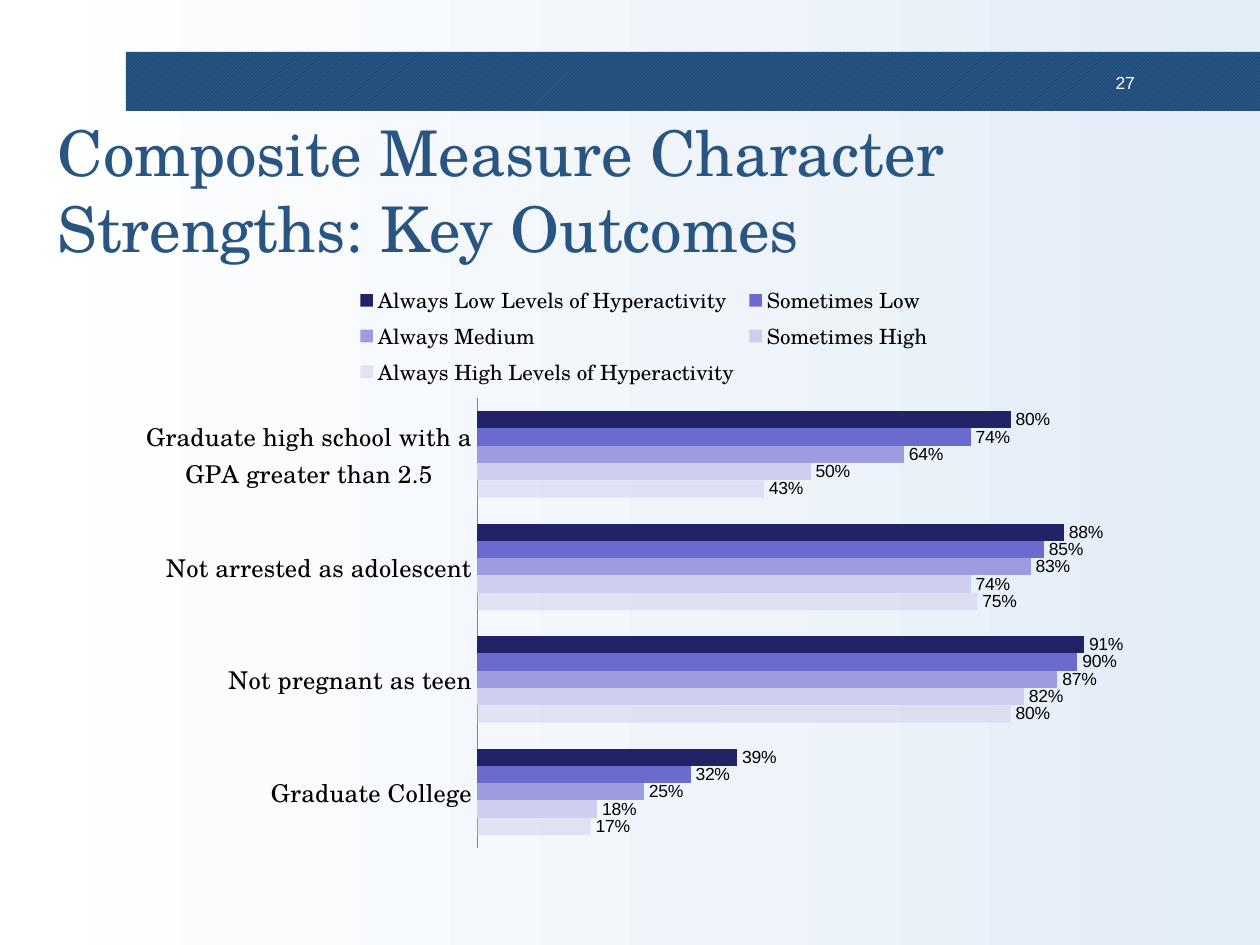
"""Build the character strengths outcomes slide."""
from dataclasses import dataclass

from lxml import etree
from pptx import Presentation
from pptx import util as u
from pptx.chart.data import CategoryChartData
from pptx.dml.color import RGBColor
from pptx.enum import chart as charts, dml, shapes, text
from pptx.oxml import parse_xml
from pptx.oxml.ns import nsdecls, qn

PX = 914400 / 126


@dataclass(frozen=True)
class Theme:
    """Colours, fonts and type sizes of the slide."""
    heading: str = "295582"
    hatch: str = "083868"
    white: str = "FFFFFF"
    black: str = "000000"
    mist: str = "E3EDF7"
    axis: str = "868686"
    serif: str = "TeX Gyre Schola"
    sans: str = "Arial"
    title_size: int = 36
    category_size: int = 14
    legend_size: int = 12
    small_size: int = 10


THEME = Theme()
CATEGORIES = ("Graduate College", "Not pregnant as teen", "Not arrested as adolescent",
              "Graduate high school with a GPA greater than 2.5")
SERIES = (
    ("Always High Levels of Hyperactivity", (0.17, 0.80, 0.75, 0.43), "CECEEF", 51),
    ("Sometimes High", (0.18, 0.82, 0.74, 0.50), "CECEEF", 100),
    ("Always Medium", (0.25, 0.87, 0.83, 0.64), "9C9CDF", 100),
    ("Sometimes Low", (0.32, 0.90, 0.85, 0.74), "6B6BCF", 100),
    ("Always Low Levels of Hyperactivity", (0.39, 0.91, 0.88, 0.80), "222267", 100),
)


def px(*lengths):
    """Turn pixel lengths into EMU."""
    return [u.Emu(round(length * PX)) for length in lengths]


def rgb(colour):
    """Turn a hex string into a colour."""
    return RGBColor.from_string(colour)


def style_font(font, size, name, colour=THEME.black):
    """Set size, family and colour of a font."""
    font.size, font.name = u.Pt(size), name
    font.color.rgb = rgb(colour)


def write(box, words, *, size, name, colour, align, inset=(5, 5)):
    """Put formatted words into a box."""
    frame = box.text_frame
    frame.word_wrap = True
    frame.auto_size = text.MSO_AUTO_SIZE.NONE
    frame.vertical_anchor = text.MSO_ANCHOR.MIDDLE
    frame.margin_left, frame.margin_top = px(*inset)
    frame.margin_right, frame.margin_bottom = px(*inset)
    para = frame.paragraphs[0]
    para.alignment = align
    span = para.add_run()
    span.text = words
    style_font(span.font, size, name, colour)


def paint_background(page):
    """Fill the page with a left-to-right gradient."""
    fill = page.background.fill
    fill.gradient()
    fill.gradient_angle = 0
    for stop, colour in zip(fill.gradient_stops, (THEME.white, THEME.mist)):
        stop.color.rgb = rgb(colour)


def add_band(page, place):
    """Add the hatched band along the top."""
    band = page.shapes.add_shape(shapes.MSO_SHAPE.RECTANGLE, *px(*place))
    band.shadow.inherit = False
    band.line.fill.background()
    band.fill.patterned()
    band.fill.pattern = dml.MSO_PATTERN.LIGHT_UPWARD_DIAGONAL
    band.fill.fore_color.rgb = rgb(THEME.hatch)
    band.fill.back_color.rgb = rgb(THEME.heading)


def add_title(page, words, place):
    """Place and fill the title placeholder."""
    title = page.shapes.title
    title.left, title.top, title.width, title.height = px(*place)
    write(title, words, size=THEME.title_size, name=THEME.serif,
          colour=THEME.heading, align=text.PP_ALIGN.LEFT)


def set_layout(element, before, inner=False, **fractions):
    """Fix the place of a chart part as fractions of the chart."""
    for old in element.findall(qn("c:layout")):
        element.remove(old)
    layout = parse_xml(f"<c:layout {nsdecls('c')}><c:manualLayout/></c:layout>")
    values = {"layoutTarget": "inner"} if inner else {}
    values.update(xMode="edge", yMode="edge", **fractions)
    for tag, value in values.items():
        etree.SubElement(layout[0], qn(f"c:{tag}")).set("val", str(value))
    element.find(qn(before)).addprevious(layout)


def style_series(series, colour, opacity):
    """Colour one series and label its bars."""
    series.format.fill.solid()
    series.format.fill.fore_color.rgb = rgb(colour)
    series.invert_if_negative = False
    if opacity < 100:
        tint = series.format.fill._xPr.find(".//" + qn("a:srgbClr"))
        etree.SubElement(tint, qn("a:alpha")).set("val", str(opacity * 1000))
    labels = series.data_labels
    labels.show_value = True
    labels.position = charts.XL_LABEL_POSITION.OUTSIDE_END
    labels.number_format, labels.number_format_is_linked = "0%", False
    style_font(labels.font, THEME.small_size, THEME.sans)


def style_axes(chart):
    """Show the category axis and hide the value axis."""
    axis = chart.category_axis
    axis.major_tick_mark = axis.minor_tick_mark = charts.XL_TICK_MARK.NONE
    axis.format.line.color.rgb = rgb(THEME.axis)
    axis.format.line.width = u.Pt(0.75)
    style_font(axis.tick_labels.font, THEME.category_size, THEME.serif)
    scale = chart.value_axis
    scale.minimum_scale, scale.maximum_scale = 0, 1
    scale.has_major_gridlines = False
    scale.tick_labels.number_format = "0%"
    scale.tick_labels.number_format_is_linked = False
    scale.visible = False


def add_outcomes_chart(page, place):
    """Add the clustered bars of outcomes by hyperactivity level."""
    data = CategoryChartData(number_format="0%")
    data.categories = CATEGORIES
    for name, values, _, _ in SERIES:
        data.add_series(name, values)
    kind = charts.XL_CHART_TYPE.BAR_CLUSTERED
    chart = page.shapes.add_chart(kind, *px(*place), data).chart
    chart.has_title = False
    style_font(chart.font, THEME.small_size, THEME.sans)
    plot = chart.plots[0]
    plot.gap_width, plot.overlap, plot.vary_by_categories = 150, 0, False
    for series, (_, _, colour, opacity) in zip(plot.series, SERIES):
        style_series(series, colour, opacity)
    style_axes(chart)
    chart.has_legend = True
    chart.legend.position = charts.XL_LEGEND_POSITION.TOP
    chart.legend.include_in_layout = False
    style_font(chart.legend.font, THEME.legend_size, THEME.serif)
    set_layout(chart.legend._element, "c:overlay", x=0.22, y=0.02, w=0.56, h=0.19)
    area = chart._chartSpace.chart.plotArea
    set_layout(area, "c:barChart", inner=True, x=0.34, y=0.22, w=0.64, h=0.76)


def main():
    """Build and save the deck."""
    deck = Presentation()
    deck.slide_width, deck.slide_height = px(1260, 945)
    page = deck.slides.add_slide(deck.slide_layouts[5])
    paint_background(page)
    add_band(page, (126, 52, 1134, 59))
    number = page.shapes.add_textbox(*px(1092, 68, 52, 29))
    write(number, "27", size=THEME.small_size, name=THEME.sans, colour=THEME.white,
          align=text.PP_ALIGN.RIGHT, inset=(9, 5))
    add_title(page, "Composite Measure Character Strengths: Key Outcomes",
              (53, 118, 1155, 142))
    add_outcomes_chart(page, (123, 268, 1042, 592))
    deck.save("out.pptx")


if __name__ == "__main__":
    main()
